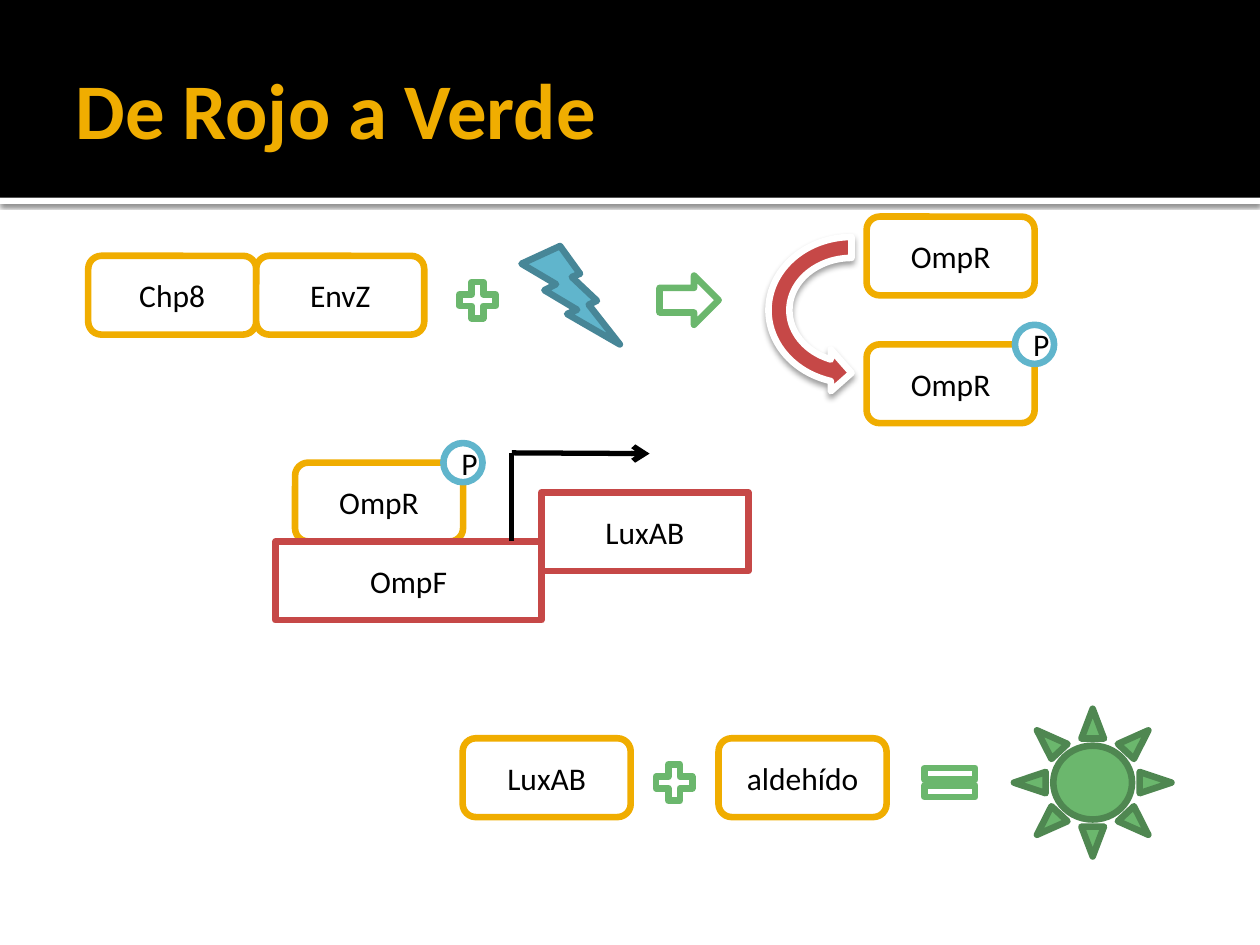
from lxml.etree import SubElement
from pptx import Presentation
from pptx.dml.color import RGBColor
from pptx.enum.shapes import MSO_CONNECTOR, MSO_SHAPE as Kind
from pptx.enum.text import MSO_ANCHOR, MSO_AUTO_SIZE, PP_ALIGN
from pptx.oxml.ns import qn
from pptx.util import Pt

theme = {
    "font": "Calibri", "title": 45, "label": 18, "edge": 3.78, "wire": 3,
    "white": "FFFFFF", "black": "000000", "gold": "F0AD00", "red": "C64847",
    "blue": "60B5CC", "navy": "478697", "green": "6BB76D", "moss": "4F8751",
}
title = "De Rojo a Verde"
wide, high, badge = 96, 45, 22.4
phos = [(495.2, 196.8), (168.6, 264.4)]
nodes = [
    ("Chp8", 50.4, 146.2), ("EnvZ", 50.4 + wide, 146.2),
    ("OmpR", 495.2, 123.8), ("OmpR", *phos[0]), ("OmpR", *phos[1]),
    ("LuxAB", 264.4, 421.9), ("aldehído", 410.6, 421.9),
]
genes = [("LuxAB", 309.4, 281.4, 118.2), ("OmpF", 157.5, 309.4, 151.9)]
signs = [
    (Kind.LIGHTNING_BOLT, 298, 140.6, 56.2, 56.2, "blue", "navy"),
    (Kind.MATH_PLUS, 258.8, 157.5, 28.1, 28.1, "white", "green"),
    (Kind.RIGHT_ARROW, 376.9, 157.5, 33.8, 28.1, "white", "green"),
    (Kind.MATH_PLUS, 371.2, 433.1, 28.1, 28.1, "white", "green"),
    (Kind.MATH_EQUAL, 523.1, 433.1, 39.4, 28.1, "white", "green"),
    (Kind.SUN, 579.4, 405, 90, 84.4, "green", "moss"),
]
turn = (Kind.CIRCULAR_ARROW, 438.8, 123.8, 95.6, 106.9, "red", "white")
wires = [((292.5, 258.8), (292.5, 309.4), False), ((292.5, 258.8), (371.2, 259.2), True)]


def tint(name):
    return RGBColor.from_string(theme[name])


def style(par, size, color, align, bold=False):
    par.alignment = align
    par.font.name = theme["font"]
    par.font.size = Pt(size)
    par.font.bold = bold
    par.font.color.rgb = tint(color)


def draw(kind, x, y, w, h, fill, edge=None, text=None):
    shape = slide.shapes.add_shape(kind, Pt(x), Pt(y), Pt(w), Pt(h))
    shape.shadow.inherit = False
    shape.fill.solid()
    shape.fill.fore_color.rgb = tint(fill)
    if edge:
        shape.line.color.rgb = tint(edge)
        shape.line.width = Pt(theme["edge"])
    else:
        shape.line.fill.background()
    if text:
        frame = shape.text_frame
        frame.text = text
        frame.vertical_anchor = MSO_ANCHOR.MIDDLE
        style(frame.paragraphs[0], theme["label"], "black", PP_ALIGN.CENTER)
    return shape


def shade(shape, alpha, blur, dist):
    effects = shape._element.spPr.find(qn("a:effectLst"))
    drop = SubElement(effects, qn("a:outerShdw"), blurRad=str(Pt(blur)),
                      dist=str(Pt(dist)), dir="5400000", rotWithShape="0")
    color = SubElement(drop, qn("a:srgbClr"), val=theme["black"])
    SubElement(color, qn("a:alpha"), val=str(alpha * 1000))


def link(start, end, head):
    line = slide.shapes.add_connector(
        MSO_CONNECTOR.STRAIGHT, *map(Pt, start), *map(Pt, end))
    line.line.color.rgb = tint("black")
    line.line.width = Pt(theme["wire"])
    if head:
        SubElement(line.line._get_or_add_ln(), qn("a:tailEnd"), type="arrow")
    SubElement(line._element.spPr, qn("a:effectLst"))


deck = Presentation()
deck.slide_width, deck.slide_height = Pt(720), Pt(540)
slide = deck.slides.add_slide(deck.slide_layouts[5])

shade(draw(Kind.RECTANGLE, 0, 113, 720, 3.6, "white"), 60, 2.5, 0.8)
draw(Kind.RECTANGLE, 0, 0, 720, 113, "black")

head = slide.shapes.title
slide.shapes._spTree.append(head._element)
head.left, head.top, head.width, head.height = map(Pt, (36, 12.2, 648, 98.6))
frame = head.text_frame
frame.text = title
frame.word_wrap = True
frame.auto_size = MSO_AUTO_SIZE.NONE
frame.vertical_anchor = MSO_ANCHOR.MIDDLE
frame.margin_left = Pt(7.2)
frame.margin_right = frame.margin_top = frame.margin_bottom = Pt(3.6)
style(frame.paragraphs[0], theme["title"], "gold", PP_ALIGN.LEFT, True)

for text, x, y in nodes:
    draw(Kind.ROUNDED_RECTANGLE, x, y, wide, high, "white", "gold", text)
for text, x, y, w in genes:
    draw(Kind.RECTANGLE, x, y, w, high, "white", "red", text)
for wire in wires:
    link(*wire)
for sign in signs:
    draw(*sign)

arc = draw(*turn)
arc.rotation = 90
arc._element.spPr.xfrm.set("flipV", "1")
shade(arc, 38, 3.5, 2)

for x, y in phos:
    draw(Kind.OVAL, x + wide - badge / 2, y - badge / 2, badge, badge, "white", "blue", "P")

deck.save("out.pptx")
